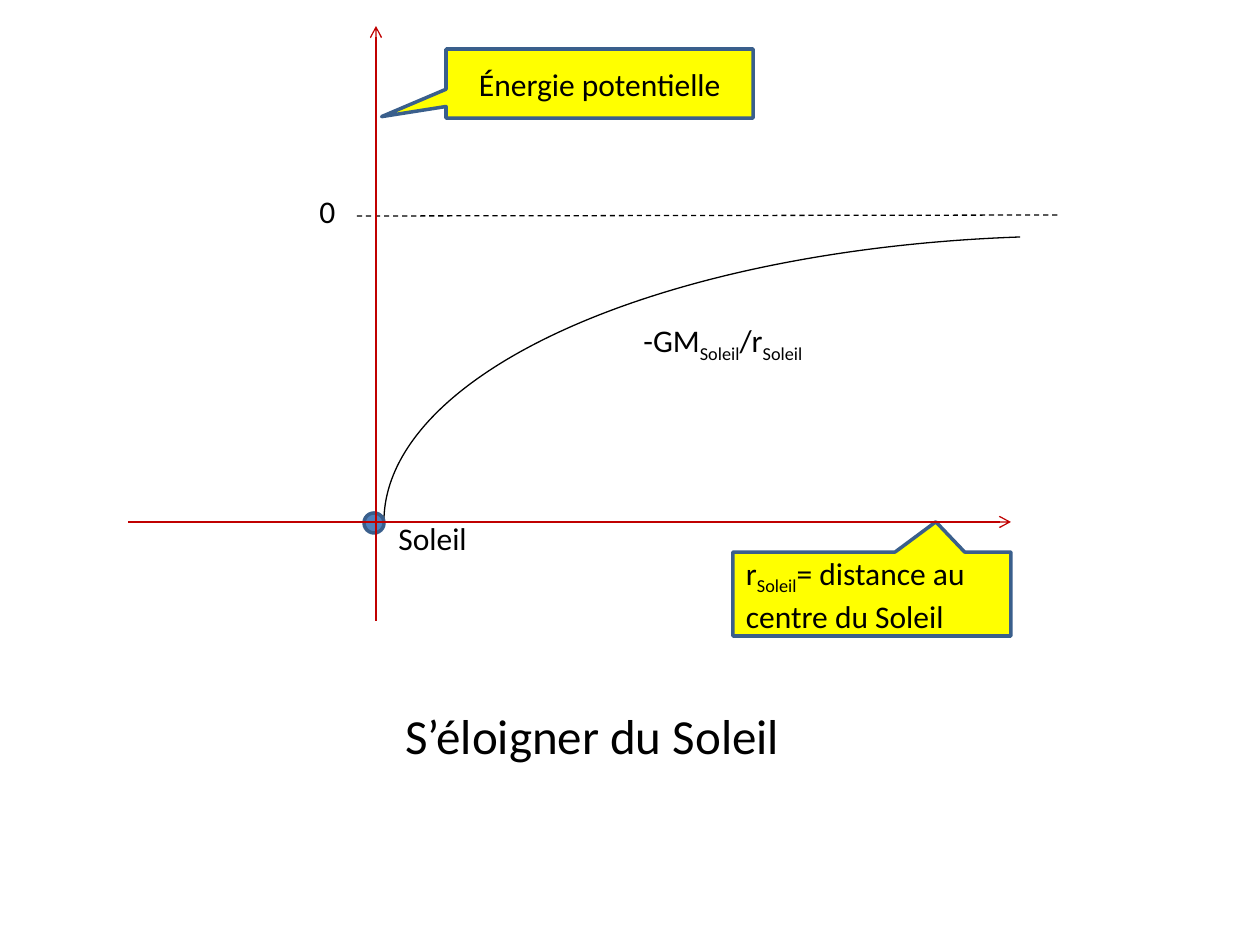
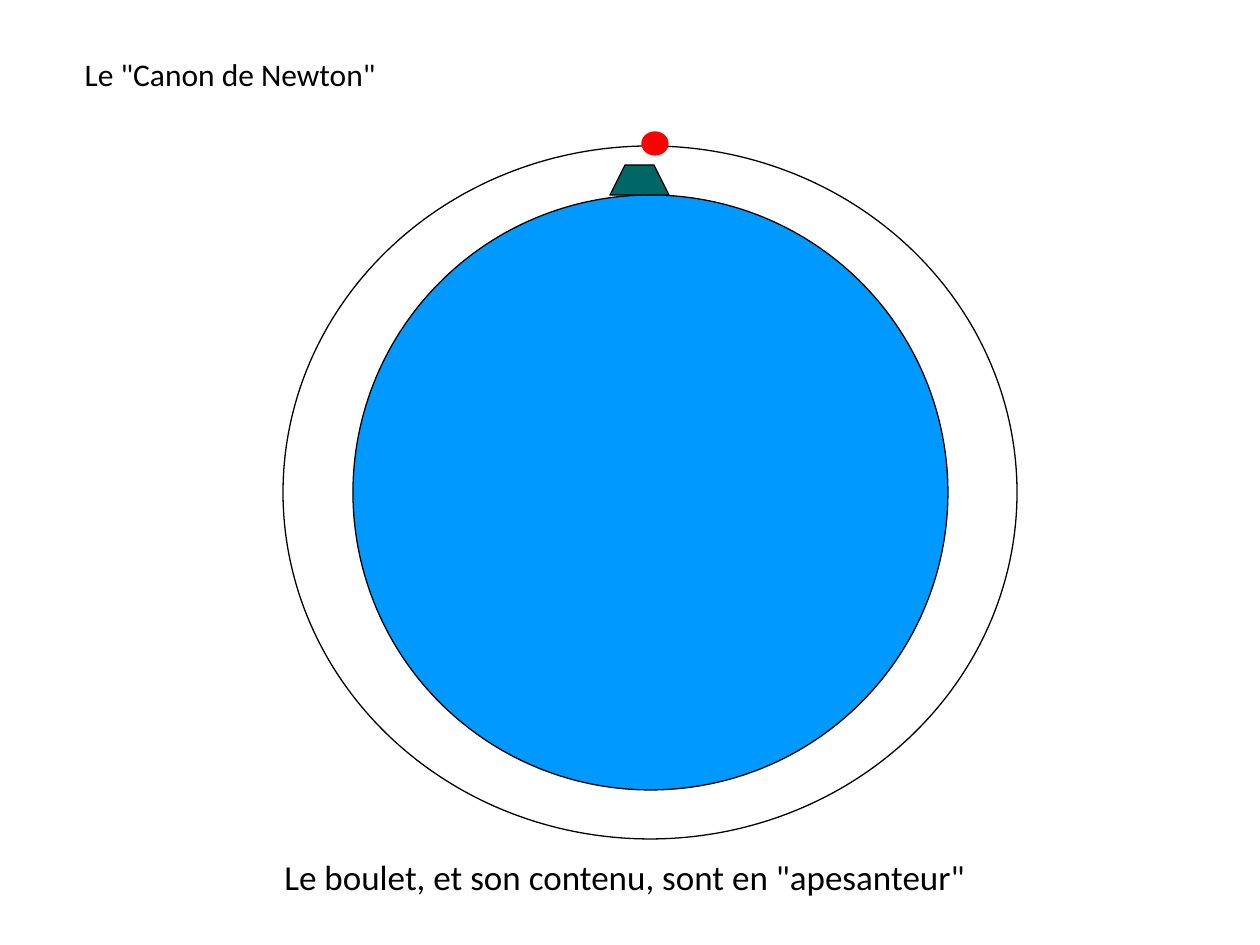
from dataclasses import dataclass

from lxml import etree
from pptx import Presentation
from pptx import util as u
from pptx.dml.color import RGBColor
from pptx.enum import dml, shapes, text
from pptx.oxml.ns import qn


@dataclass(frozen=True)
class Theme:
    font: str = "Calibri"
    ink: RGBColor = RGBColor(0, 0, 0)
    axis: RGBColor = RGBColor(0xC0, 0, 0)
    callout: RGBColor = RGBColor(0xFF, 0xFF, 0)
    sun: RGBColor = RGBColor(0x4F, 0x81, 0xBD)
    border: RGBColor = RGBColor(0x3A, 0x5F, 0x8C)
    earth: RGBColor = RGBColor(0, 0x99, 0xFF)
    cannon: RGBColor = RGBColor(0, 0x66, 0x66)
    ball: RGBColor = RGBColor(0xFF, 0, 0)
    label: int = 18
    caption: int = 20
    heading: int = 28
    thin: float = 0.75
    thick: float = 2


T = Theme()
PX = u.Inches(1) / 126
MSO = shapes.MSO_SHAPE


def px(*lengths):
    return [round(n * PX) for n in lengths]


def write(sp, words, size, wrap=False, anchor=text.MSO_ANCHOR.TOP):
    """Fill a shape with left-aligned text; parts between underscores are subscripts."""
    tf = sp.text_frame
    tf.word_wrap = wrap
    tf.auto_size = text.MSO_AUTO_SIZE.NONE
    tf.vertical_anchor = anchor
    p = tf.paragraphs[0]
    p.alignment = text.PP_ALIGN.LEFT
    p.font.name, p.font.size = T.font, u.Pt(size)
    p.font.color.rgb = T.ink
    for i, part in enumerate(words.split("_")):
        r = p.add_run()
        r.text = part
        if i % 2:
            r._r.get_or_add_rPr().set("baseline", "-25000")


prs = Presentation()
prs.slide_width, prs.slide_height = px(1260, 945)
title_only = prs.slide_layouts[5]

# Slide titles
slides = []
for words, size, box in [
    ("S’éloigner du Soleil", T.heading, (393, 699, 403, 72)),
    ('Le "Canon de Newton"', T.label, (72, 49, 344, 50)),
]:
    s = prs.slides.add_slide(title_only)
    sp = s.shapes.title
    sp.left, sp.top, sp.width, sp.height = px(*box)
    write(sp, words, size)
    slides.append(s)
potential, newton = slides

# Plain shapes: slide, kind, box, fill, line colour, line width
drawn = []
for s, kind, box, fill, line, width in [
    (potential, MSO.ARC, (384, 236, 1388, 572), None, T.ink, T.thin),
    (potential, MSO.OVAL, (364, 513, 20, 20), T.sun, T.border, T.thick),
    (newton, MSO.OVAL, (353, 195, 595, 595), T.earth, T.ink, T.thin),
    (newton, MSO.TRAPEZOID, (610, 165, 59, 30), T.cannon, T.ink, T.thin),
    (newton, MSO.OVAL, (283, 146, 734, 693), None, T.ink, T.thin),
    (newton, MSO.OVAL, (642, 132, 26, 23), T.ball, T.ball, T.thin),
    (potential, MSO.RECTANGULAR_CALLOUT, (733, 552, 278, 84), T.callout, T.border, T.thick),
    (potential, MSO.RECTANGULAR_CALLOUT, (446, 49, 307, 69), T.callout, T.border, T.thick),
]:
    sp = s.shapes.add_shape(kind, *px(*box))
    sp.shadow.inherit = False
    if fill is None:
        sp.fill.background()
    else:
        sp.fill.solid()
        sp.fill.fore_color.rgb = fill
    sp.line.color.rgb = line
    sp.line.width = u.Pt(width)
    drawn.append(sp)

curve, cannon = drawn[0], drawn[3]
curve.adjustments[0], curve.adjustments[1] = 168.88, 0
curve._element.spPr.find(qn("a:xfrm")).set("flipH", "1")
cannon.adjustments[0] = 0.5

# Callouts: text, pointer tip, left inset
for sp, words, tip, inset in [
    (drawn[-2], "r_Soleil_= distance au centre du Soleil", (0.23, -0.86), 13),
    (drawn[-1], "Énergie potentielle", (-0.71, 0.48), 33),
]:
    sp.adjustments[0], sp.adjustments[1] = tip
    write(sp, words, T.label, wrap=True, anchor=text.MSO_ANCHOR.MIDDLE)
    sp.text_frame.margin_left = px(inset)[0]

# Zero level and the two axes
for ends, color, is_axis in [
    ((357, 216, 1061, 215), T.ink, False),
    ((376, 621, 376, 26), T.axis, True),
    ((128, 522, 1011, 522), T.axis, True),
]:
    cxn = potential.shapes.add_connector(shapes.MSO_CONNECTOR.STRAIGHT, *px(*ends))
    cxn.line.color.rgb = color
    cxn.line.width = u.Pt(T.thin)
    if is_axis:
        etree.SubElement(cxn.line._get_or_add_ln(), qn("a:tailEnd"), type="arrow")
    else:
        cxn.line.dash_style = dml.MSO_LINE.DASH
    etree.SubElement(cxn._element.spPr, qn("a:effectLst"))

# Labels
for s, words, size, box in [
    (potential, "0", T.label, (307, 186, 42, 47)),
    (potential, "-GM_Soleil_/r_Soleil", T.label, (631, 315, 184, 50)),
    (potential, "Soleil", T.label, (386, 513, 95, 50)),
    (newton, 'Le boulet, et son contenu, sont en "apesanteur"', T.caption, (272, 849, 761, 54)),
]:
    write(s.shapes.add_textbox(*px(*box)), words, size)

prs.save("out.pptx")
